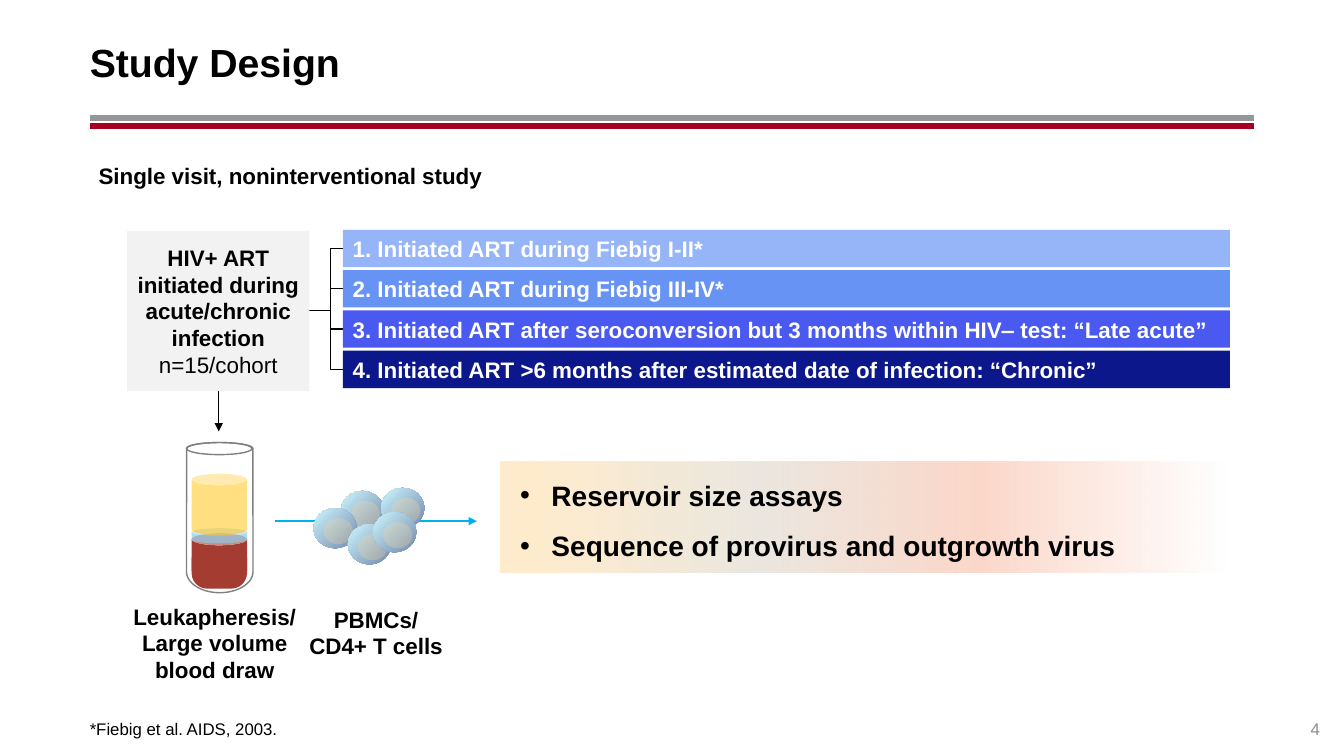
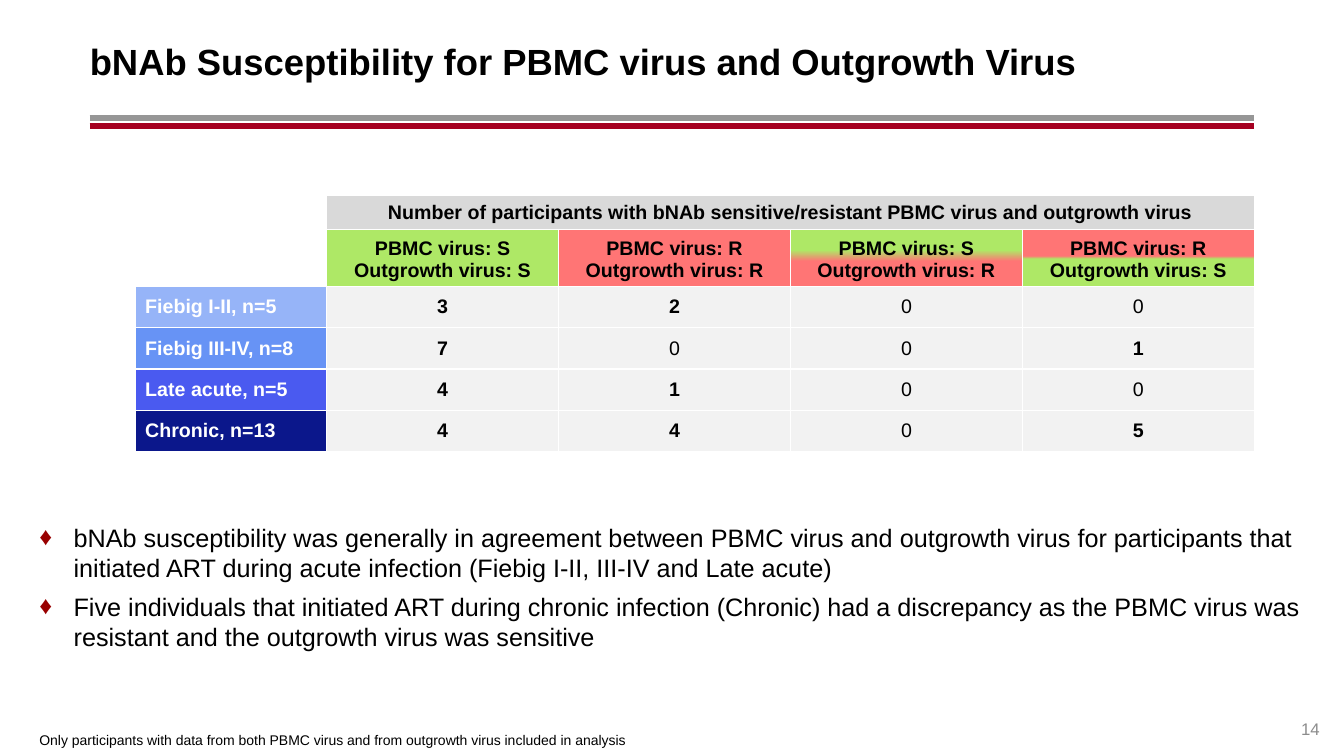
from copy import deepcopy
from math import cos, radians, sin

from lxml.etree import SubElement
from pptx import Presentation
from pptx.dml.color import RGBColor
from pptx.enum.shapes import MSO_CONNECTOR, MSO_SHAPE
from pptx.enum.text import MSO_ANCHOR, PP_ALIGN
from pptx.oxml import parse_xml
from pptx.oxml.ns import nsdecls, qn
from pptx.util import Inches, Pt

color = RGBColor.from_string
BLACK, WHITE, PALE = "000000", "FFFFFF", "F2F2F2"
SENSITIVE, RESISTANT, BLOOD = "AEE866", "FF7575", "A53C31"
COHORT_COLORS = ["96B4F8", "6793F5", "4A5AF0", "0B178B"]
NO_INSETS = (0, 0, 0, 0)
TITLE_INSETS = (0, 0.05, 0, 0.05)


def add_box(slide, kind, bounds, fill=None, alpha=None, line=None,
            insets=(0.1, 0.05, 0.1, 0.05), anchor=MSO_ANCHOR.TOP):
    left, top, width, height = [Inches(value) for value in bounds]
    if kind is None:
        shape = slide.shapes.add_textbox(left, top, width, height)
    else:
        shape = slide.shapes.add_shape(kind, left, top, width, height)
        shape.shadow.inherit = False
        shape.fill.background()
        shape.line.fill.background()
    if fill:
        shape.fill.solid()
        shape.fill.fore_color.rgb = color(fill)
    if alpha:
        fill_color = shape._element.spPr.find(".//" + qn("a:srgbClr"))
        SubElement(fill_color, qn("a:alpha"), val=str(alpha * 1000))
    if line:
        shape.line.color.rgb = color(line)
        shape.line.width = Pt(1)
    frame = shape.text_frame
    frame.word_wrap = True
    frame.vertical_anchor = anchor
    frame.margin_left, frame.margin_top, frame.margin_right, frame.margin_bottom = [
        Inches(value) for value in insets]
    return shape


def write(frame, text, size, bold=False, font_color=BLACK, align=PP_ALIGN.LEFT,
          bullet=None, bullet_color=BLACK, indent=0):
    frame.text = text
    for paragraph in frame.paragraphs:
        paragraph.alignment = align
        for run in paragraph.runs:
            run.font.name = "Arial"
            run.font.size = Pt(size)
            run.font.bold = bold
            run.font.color.rgb = color(font_color)
        if bullet:
            properties = paragraph._p.get_or_add_pPr()
            properties.set("marL", str(Inches(indent)))
            properties.set("indent", str(-Inches(indent)))
            bullet_fill = SubElement(properties, qn("a:buClr"))
            SubElement(bullet_fill, qn("a:srgbClr"), val=bullet_color)
            SubElement(properties, qn("a:buFont"), typeface="Arial")
            SubElement(properties, qn("a:buChar"), char=bullet)


presentation = Presentation()
presentation.slide_width = Inches(13.33)
presentation.slide_height = Inches(7.5)
blank = presentation.slide_layouts[6]
design = presentation.slides.add_slide(blank)
results = presentation.slides.add_slide(blank)

connectors = []
for slide in (design, results):
    connectors.append((slide, 0.89, 1.17, 12.44, 1.17, "969696", 4.25, False))
    connectors.append((slide, 0.89, 1.25, 12.44, 1.25, "A50021", 4.25, False))
connectors += [
    (design, 2.27, 3.08, 3.28, 3.08, BLACK, 1, False),
    (design, 2.17, 3.88, 2.17, 4.28, BLACK, 1, True),
    (design, 2.73, 5.17, 4.73, 5.17, "00B0F0", 1.5, True),
]
for slide, x1, y1, x2, y2, line_color, width, arrow in connectors:
    connector = slide.shapes.add_connector(
        MSO_CONNECTOR.STRAIGHT, Inches(x1), Inches(y1), Inches(x2), Inches(y2))
    connector.line.color.rgb = color(line_color)
    connector.line.width = Pt(width)
    if arrow:
        SubElement(connector.line._get_or_add_ln(), qn("a:tailEnd"), type="triangle")
    SubElement(connector._element.spPr, qn("a:effectLst"))

pages = [
    (design, "Study Design", 28, "4",
     "*Fiebig et al. AIDS, 2003.", 12, (0.89, 7.13, 11.55, 0.2)),
    (results, "bNAb Susceptibility for PBMC virus and Outgrowth Virus", 26, "14",
     "Only participants with data from both PBMC virus and from outgrowth virus "
     "included in analysis", 10, (0.39, 7.25, 11.55, 0.17)),
]
for slide, title, title_size, number, footnote, footnote_size, footnote_bounds in pages:
    box = add_box(slide, None, (0.89, 0.18, 12.28, 0.86),
                  insets=TITLE_INSETS, anchor=MSO_ANCHOR.MIDDLE)
    write(box.text_frame, title, title_size, True)
    box = add_box(slide, None, footnote_bounds, insets=NO_INSETS, anchor=MSO_ANCHOR.BOTTOM)
    write(box.text_frame, footnote, footnote_size)
    box = add_box(slide, None, (12.44, 6.93, 0.65, 0.4),
                  insets=NO_INSETS, anchor=MSO_ANCHOR.BOTTOM)
    write(box.text_frame, number, 12, font_color="8C8C8C", align=PP_ALIGN.RIGHT)

labels = [
    ("Single visit, noninterventional study", (0.88, 1.56, 4.5, 0.37), PP_ALIGN.LEFT),
    ("Leukapheresis/\vLarge volume blood draw", (1.13, 5.93, 2, 0.91), PP_ALIGN.CENTER),
    ("PBMCs/\nCD4+ T cells", (2.93, 5.96, 1.6, 0.64), PP_ALIGN.CENTER),
]
for text, bounds, align in labels:
    box = add_box(design, None, bounds)
    write(box.text_frame, text, 16, True, align=align)

population = add_box(design, MSO_SHAPE.RECTANGLE, (1.26, 2.29, 1.81, 1.59), PALE,
                     anchor=MSO_ANCHOR.MIDDLE)
write(population.text_frame,
      "HIV+ ART initiated during acute/chronic infection\nn=15/cohort",
      16, True, align=PP_ALIGN.CENTER)
population.text_frame.paragraphs[1].runs[0].font.bold = False

bar_top, bar_pitch, bar_height = 2.28, 0.4, 0.37
bar_middles = [bar_top + bar_pitch * row + bar_height / 2 for row in range(4)]
for first, last in ((0, 2), (1, 3)):
    upper, lower = Inches(bar_middles[first]), Inches(bar_middles[last])
    builder = design.shapes.build_freeform(Inches(3.48), lower)
    builder.add_line_segments(
        [(Inches(3.28), lower), (Inches(3.28), upper), (Inches(3.48), upper)], close=False)
    bracket = builder.convert_to_shape()
    bracket.shadow.inherit = False
    bracket.fill.background()
    bracket.line.color.rgb = color(BLACK)
    bracket.line.width = Pt(1)

cohorts = [
    "1. Initiated ART during Fiebig I-II*",
    "2. Initiated ART during Fiebig III-IV*",
    "3. Initiated ART after seroconversion but 3 months within HIV‒ test: “Late acute”",
    "4. Initiated ART >6 months after estimated date of infection: “Chronic”",
]
for row, (cohort, cohort_color) in enumerate(zip(cohorts, COHORT_COLORS)):
    bar = add_box(design, MSO_SHAPE.RECTANGLE,
                  (3.4, bar_top + bar_pitch * row, 8.8, bar_height),
                  cohort_color, anchor=MSO_ANCHOR.MIDDLE)
    write(bar.text_frame, cohort, 16, True, WHITE)

outline = []
for angle in range(0, 360, 5):
    middle, depth = (5.67, 0.21) if angle <= 180 else (4.45, 0.06)
    outline.append((Inches(2.18 + 0.33 * cos(radians(angle))),
                    Inches(middle + depth * sin(radians(angle)))))
builder = design.shapes.build_freeform(*outline[0])
builder.add_line_segments(outline[1:])
tube = builder.convert_to_shape()
tube.shadow.inherit = False
tube.fill.solid()
tube.fill.fore_color.rgb = color(WHITE)
tube.line.color.rgb = color("808080")
tube.line.width = Pt(1)

tube_parts = [
    (MSO_SHAPE.ROUND_2_SAME_RECTANGLE, (1.9, 5.53, 0.55, 0.31), BLOOD, None, None, (0, 0.5)),
    (MSO_SHAPE.OVAL, (1.85, 4.39, 0.65, 0.12), None, None, "808080", ()),
    (MSO_SHAPE.CAN, (1.9, 5.29, 0.55, 0.43), BLOOD, None, None, (0.28,)),
    (MSO_SHAPE.CAN, (1.9, 5.24, 0.55, 0.15), "8BCBE7", 67, None, (0.5,)),
    (MSO_SHAPE.CAN, (1.9, 4.7, 0.55, 0.61), "FFC000", 50, None, (0.21,)),
]
for kind, bounds, fill, alpha, line, adjustments in tube_parts:
    part = add_box(design, kind, bounds, fill, alpha, line)
    for index, adjustment in enumerate(adjustments):
        part.adjustments[index] = adjustment

for left, top in ((3.38, 4.87), (3.11, 5.04), (3.45, 5.2), (3.78, 4.84), (3.7, 5.08)):
    membrane = add_box(design, MSO_SHAPE.OVAL, (left, top, 0.43, 0.4))
    membrane.fill.gradient()
    for stop, stop_color in zip(membrane.fill.gradient_stops, ("CEF6FF", "728AAD")):
        stop.color.rgb = color(stop_color)
    linear = membrane._element.spPr.find(".//" + qn("a:lin"))
    linear.getparent().replace(linear, parse_xml(
        f'<a:path {nsdecls("a")} path="circle">'
        '<a:fillToRect r="100000" b="100000"/></a:path>'))
    add_box(design, MSO_SHAPE.OVAL, (left + 0.1, top + 0.1, 0.29, 0.26), "FFD99B", 27)

assays = add_box(design, MSO_SHAPE.RECTANGLE, (4.96, 4.58, 7.49, 1.1),
                 insets=(0.2, 0, 0.2, 0.1), anchor=MSO_ANCHOR.MIDDLE)
assays.fill.gradient()
assays.fill.gradient_angle = 0
stop_list = assays._element.spPr.find(".//" + qn("a:gsLst"))
for stop_element in list(stop_list):
    stop_list.append(deepcopy(stop_element))
assay_stops = [(0.05, "FFECCD"), (0.34, "EBE7E0"), (0.63, "FCD8CA"), (0.96, "FCD8CA")]
for stop, (position, stop_color) in zip(assays.fill.gradient_stops, assay_stops):
    stop.position = position
    stop.color.rgb = color(stop_color)
SubElement(stop_list[-1][0], qn("a:alpha"), val="0")
write(assays.text_frame, "Reservoir size assays\nSequence of provirus and outgrowth virus",
      20, True, bullet="•", indent=0.31)
for paragraph in assays.text_frame.paragraphs:
    paragraph.line_spacing = 1.5

findings = add_box(results, None, (0.39, 5.13, 12.51, 1.33), insets=TITLE_INSETS)
write(findings.text_frame,
      "bNAb susceptibility was generally in agreement between PBMC virus and outgrowth virus "
      "for participants that initiated ART during acute infection "
      "(Fiebig I-II, III-IV and Late acute)\n"
      "Five individuals that initiated ART during chronic infection (Chronic) had a "
      "discrepancy as the PBMC virus was resistant and the outgrowth virus was sensitive",
      18, bullet="♦", bullet_color="990000", indent=0.34)
for paragraph in findings.text_frame.paragraphs:
    paragraph.space_before = Pt(6)

rows = [
    ["", "Number of participants with bNAb sensitive/resistant PBMC virus and outgrowth virus",
     "", "", ""],
    [""] + [f"PBMC virus: {pbmc}\nOutgrowth virus: {outgrowth}"
            for pbmc, outgrowth in ("SS", "RR", "SR", "RS")],
    ["Fiebig I-II, n=5", "3", "2", "0", "0"],
    ["Fiebig III-IV, n=8", "7", "0", "0", "1"],
    ["Late acute, n=5", "4", "1", "0", "0"],
    ["Chronic, n=13", "4", "4", "0", "5"],
]
header_fills = [SENSITIVE, RESISTANT, None, None]
header_gradients = {
    3: ((0.37, SENSITIVE), (0.56, RESISTANT)),
    4: ((0.47, RESISTANT), (0.52, SENSITIVE)),
}
table = results.shapes.add_table(
    6, 5, Inches(1.34), Inches(1.94), Inches(11.1), Inches(2.5)).table
table.first_row = False
table.horz_banding = False
for column, width in zip(table.columns, [1.9] + [2.3] * 4):
    column.width = Inches(width)
for table_row, height in zip(table.rows, [0.32, 0.54] + [0.41] * 4):
    table_row.height = Inches(height)
table.cell(0, 0).merge(table.cell(1, 0))
table.cell(0, 1).merge(table.cell(0, 4))

for row, texts in enumerate(rows):
    for column, text in enumerate(texts):
        cell = table.cell(row, column)
        properties = cell._tc.get_or_add_tcPr()
        for side in ("L", "R", "T", "B"):
            if row == 0 and column > 0:
                continue
            border = SubElement(properties, qn(f"a:ln{side}"), w=str(Pt(1)))
            border_fill = SubElement(border, qn("a:solidFill"))
            SubElement(border_fill, qn("a:srgbClr"), val=WHITE)
        cell.vertical_anchor = MSO_ANCHOR.BOTTOM if row == 1 else MSO_ANCHOR.MIDDLE
        row_label = column == 0 and row > 1
        if row == 1 and column in header_gradients:
            cell.fill.gradient()
            cell.fill.gradient_angle = 270
            for stop, (position, stop_color) in zip(
                    cell.fill.gradient_stops, header_gradients[column]):
                stop.position = position
                stop.color.rgb = color(stop_color)
        elif column == 0 and row < 2:
            cell.fill.background()
        else:
            fill = PALE
            if row == 0:
                fill = "D9D9D9"
            elif row == 1:
                fill = header_fills[column - 1]
            elif row_label:
                fill = COHORT_COLORS[row - 2]
            cell.fill.solid()
            cell.fill.fore_color.rgb = color(fill)
        if text:
            write(cell.text_frame, text, 14, text != "0", WHITE if row_label else BLACK,
                  PP_ALIGN.LEFT if row_label else PP_ALIGN.CENTER)

presentation.save("out.pptx")
